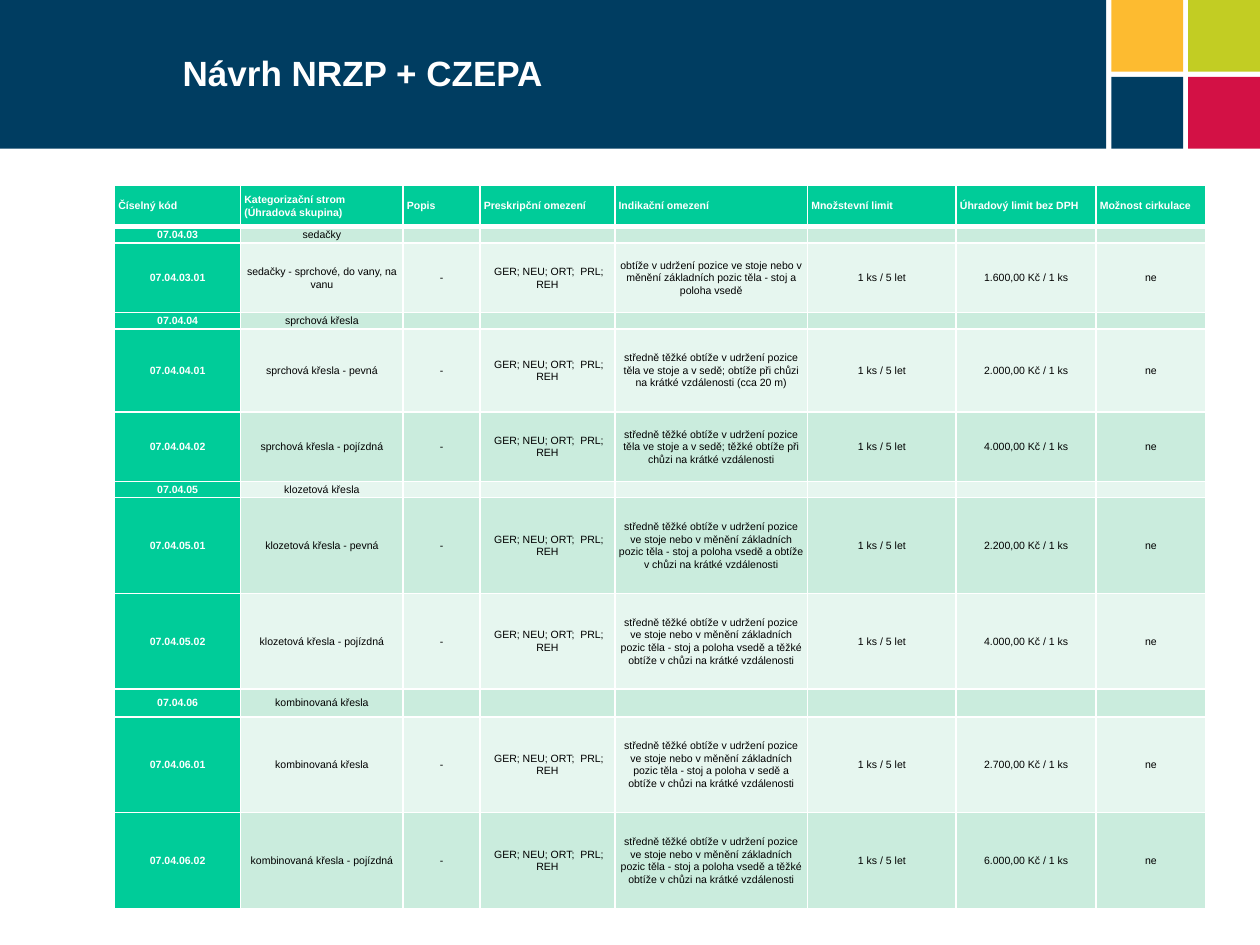
from lxml.etree import SubElement
from pptx import Presentation
from pptx.dml.color import RGBColor
from pptx.enum.shapes import MSO_SHAPE
from pptx.enum.text import MSO_ANCHOR, MSO_AUTO_SIZE, PP_ALIGN
from pptx.oxml import parse_xml
from pptx.oxml.ns import nsdecls, qn
from pptx.util import Inches, Pt

NAVY = RGBColor(0x00, 0x3D, 0x61)
CRIMSON = RGBColor(0xD3, 0x11, 0x45)
LIME = RGBColor(0xC2, 0xCD, 0x23)
AMBER = RGBColor(0xFD, 0xBB, 0x30)
GREEN = RGBColor(0x00, 0xCC, 0x99)
BANDS = (RGBColor(0xE6, 0xF6, 0xEF), RGBColor(0xCA, 0xEC, 0xDD))
WHITE = RGBColor(0xFF, 0xFF, 0xFF)
BLACK = RGBColor(0x00, 0x00, 0x00)

HEADINGS = ("Číselný kód", "Kategorizační strom (Úhradová skupina)", "Popis",
            "Preskripční omezení", "Indikační omezení", "Množstevní limit",
            "Úhradový limit bez DPH", "Možnost cirkulace")
COLUMN_WIDTHS = (1, 1.29, 0.61, 1.07, 1.53, 1.18, 1.11, 0.87)
ROW_HEIGHTS = (0.33, 0.13, 0.55, 0.13, 0.66, 0.55, 0.13, 0.76, 0.76, 0.22, 0.76, 0.76)

SHOWER = "středně těžké obtíže v udržení pozice těla ve stoje a v sedě; "
POSTURE = ("středně těžké obtíže v udržení pozice ve stoje nebo v měnění "
           "základních pozic těla - stoj a poloha ")
WALKING = "obtíže v chůzi na krátké vzdálenosti"
SEATS = (
    ("07.04.03", "sedačky"),
    ("07.04.03.01", "sedačky - sprchové, do vany, na vanu",
     "obtíže v udržení pozice ve stoje nebo v měnění základních pozic těla - "
     "stoj a poloha vsedě", "1.600,00"),
    ("07.04.04", "sprchová křesla"),
    ("07.04.04.01", "sprchová křesla - pevná",
     SHOWER + "obtíže při chůzi na krátké vzdálenosti (cca 20 m)", "2.000,00"),
    ("07.04.04.02", "sprchová křesla - pojízdná",
     SHOWER + "těžké obtíže při chůzi na krátké vzdálenosti", "4.000,00"),
    ("07.04.05", "klozetová křesla"),
    ("07.04.05.01", "klozetová křesla - pevná",
     POSTURE + "vsedě a " + WALKING, "2.200,00"),
    ("07.04.05.02", "klozetová křesla - pojízdná",
     POSTURE + "vsedě a těžké " + WALKING, "4.000,00"),
    ("07.04.06", "kombinovaná křesla"),
    ("07.04.06.01", "kombinovaná křesla",
     POSTURE + "v sedě a " + WALKING, "2.700,00"),
    ("07.04.06.02", "kombinovaná křesla - pojízdná",
     POSTURE + "vsedě a těžké " + WALKING, "6.000,00"),
)


def apply_format(target, values):
    """Set each named attribute on the target."""
    for name, value in values.items():
        setattr(target, name, value)


def seat_row(code, group, indication=None, price=None):
    """Return the eight texts of one table row."""
    if indication is None:
        return (code, group) + ("",) * 6
    return (code, group, "-", " GER; NEU; ORT;  PRL; REH", indication,
            "1 ks / 5 let", f"{price} Kč / 1 ks", "ne")


class SlideBuilder:
    """Holds the text style and the slide being built."""

    TITLE_FONT = {"name": "Arial", "size": Pt(20), "bold": True}
    CELL_FONT = {"name": "Arial", "size": Pt(6)}
    CELL_LAYOUT = {"vertical_anchor": MSO_ANCHOR.MIDDLE,
                   "margin_left": Inches(0.03), "margin_right": Inches(0.03),
                   "margin_top": 0, "margin_bottom": 0}
    TITLE_FRAME = {"word_wrap": True, "auto_size": MSO_AUTO_SIZE.NONE,
                   "vertical_anchor": MSO_ANCHOR.MIDDLE,
                   "margin_left": Inches(0.1), "margin_right": Inches(0.1),
                   "margin_top": Inches(0.1), "margin_bottom": Inches(0.1)}

    def __init__(self, slide):
        """Keep the slide to build on."""
        self.slide = slide

    def block(self, left, top, width, height, color):
        """Add a plain coloured rectangle."""
        block = self.slide.shapes.add_shape(
            MSO_SHAPE.RECTANGLE, Inches(left), Inches(top), Inches(width), Inches(height))
        block.shadow.inherit = False
        block.fill.solid()
        block.fill.fore_color.rgb = color
        block.line.fill.background()

    def title(self, text, left, top, width, height):
        """Fill the title placeholder and lift it above the header band."""
        title = self.slide.shapes.title
        apply_format(title, {"left": Inches(left), "top": Inches(top),
                             "width": Inches(width), "height": Inches(height)})
        apply_format(title.text_frame, self.TITLE_FRAME)
        title.text_frame.text = text
        paragraph = title.text_frame.paragraphs[0]
        paragraph.alignment = PP_ALIGN.JUSTIFY
        apply_format(paragraph.runs[0].font, self.TITLE_FONT)
        paragraph.runs[0].font.color.rgb = WHITE
        self.slide.shapes.element.append(title.element)

    def table(self, left, top, widths, heights, rows):
        """Add the banded table with a green header row and code column."""
        table = self.slide.shapes.add_table(
            len(rows), len(widths), Inches(left), Inches(top),
            Inches(sum(widths)), Inches(sum(heights))).table
        for column, width in zip(table.columns, widths):
            column.width = Inches(width)
        for row, height in zip(table.rows, heights):
            row.height = Inches(height)
        for r, texts in enumerate(rows):
            for c, text in enumerate(texts):
                self.cell(table.cell(r, c), text, r, c)

    def cell(self, cell, text, r, c):
        """Write and style one cell according to its row and column."""
        strong = r == 0 or c == 0
        apply_format(cell, self.CELL_LAYOUT)
        cell.fill.solid()
        cell.fill.fore_color.rgb = GREEN if strong else BANDS[r % 2]
        self.borders(cell, top=3 if r == 1 else 1, bottom=3 if r == 0 else 1)
        paragraph = cell.text_frame.paragraphs[0]
        apply_format(paragraph, {"line_spacing": 1.07,
                                 "alignment": PP_ALIGN.CENTER if r else PP_ALIGN.LEFT})
        if not text:
            SubElement(paragraph._p, qn("a:endParaRPr"), sz="600")
            return
        run = paragraph.add_run()
        run.text = text
        apply_format(run.font, {**self.CELL_FONT, "bold": strong})
        run.font.color.rgb = WHITE if strong else BLACK

    def borders(self, cell, top, bottom):
        """Draw white cell borders, one point wide at the sides."""
        properties = cell._tc.get_or_add_tcPr()
        sides = {"lnL": 1, "lnR": 1, "lnT": top, "lnB": bottom}
        for position, (side, width) in enumerate(sides.items()):
            properties.insert(position, parse_xml(
                f'<a:{side} {nsdecls("a")} w="{Pt(width)}"><a:solidFill>'
                f'<a:srgbClr val="{WHITE}"/></a:solidFill></a:{side}>'))


def main():
    """Build and save the presentation."""
    deck = Presentation()
    apply_format(deck, {"slide_width": Inches(10), "slide_height": Inches(7.5)})
    builder = SlideBuilder(deck.slides.add_slide(deck.slide_layouts[5]))
    builder.block(0, 0, 8.78, 1.18, NAVY)
    for left, top, color in ((9.43, 0.61, CRIMSON), (9.43, 0, LIME),
                             (8.82, 0.61, NAVY), (8.82, 0, AMBER)):
        builder.block(left, top, 0.57, 0.57, color)
    builder.title("Návrh NRZP + CZEPA", 1.35, 0, 7.43, 1.15)
    builder.table(0.91, 1.47, COLUMN_WIDTHS, ROW_HEIGHTS,
                  [HEADINGS] + [seat_row(*seat) for seat in SEATS])
    deck.save("out.pptx")


if __name__ == "__main__":
    main()
